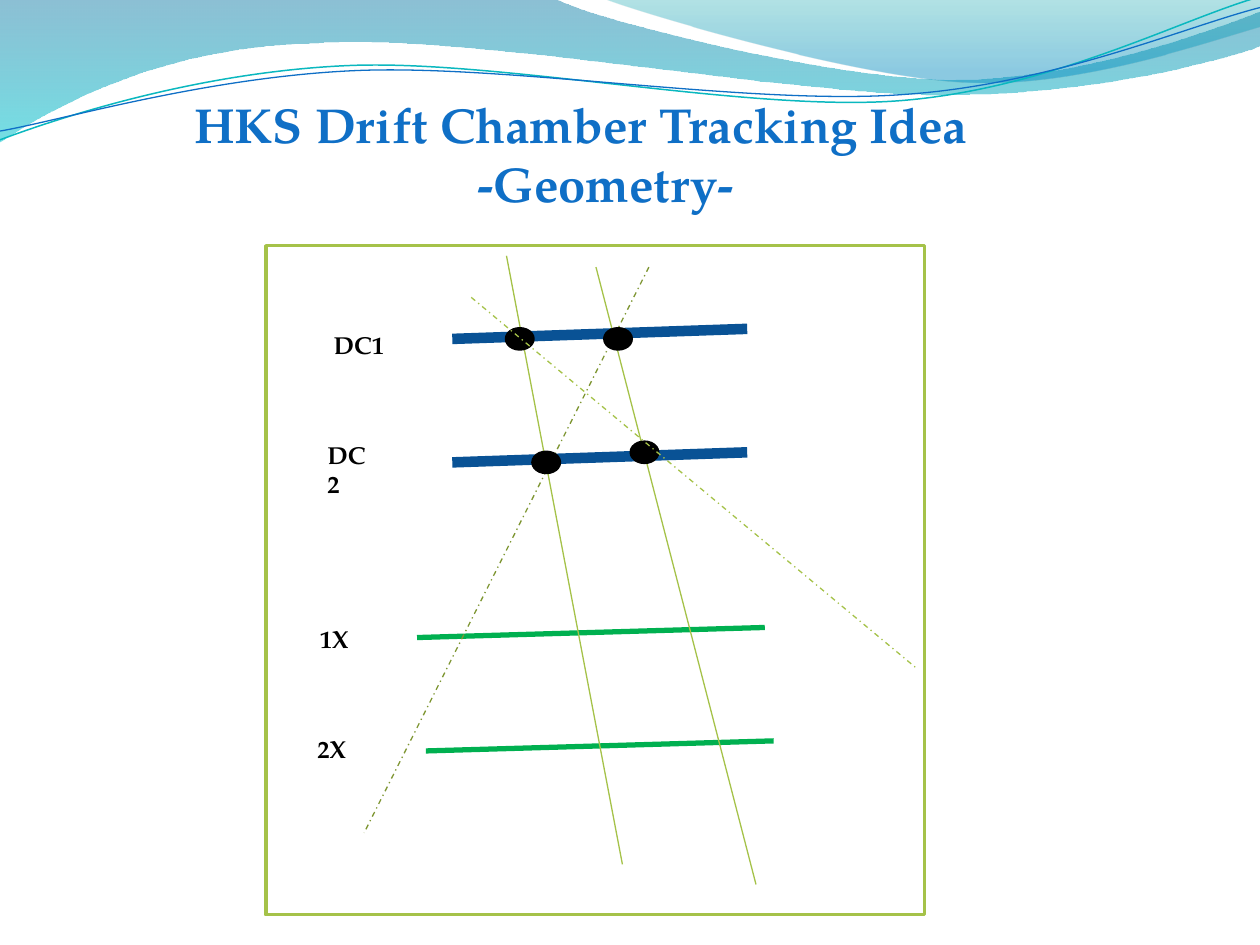
"""Build the HKS drift chamber geometry slide on a grid of 100 columns by 75 rows."""
import math

from lxml import etree
from pptx import Presentation
from pptx import util as u
from pptx.dml.color import RGBColor
from pptx.enum import dml, shapes, text
from pptx.oxml import ns

FONT = "TeX Gyre Pagella"
WHITE = RGBColor(0xFF, 0xFF, 0xFF)
BLACK = RGBColor(0x00, 0x00, 0x00)
BLUE = RGBColor(0x0F, 0x6F, 0xC6)
NAVY = RGBColor(0x09, 0x52, 0x95)
TEAL = RGBColor(0x0A, 0xB8, 0xBF)
LIME = RGBColor(0xA5, 0xC2, 0x49)
OLIVE = RGBColor(0x7E, 0x96, 0x32)
GREEN = RGBColor(0x00, 0xB0, 0x50)
DEEP_SEA = RGBColor(0x00, 0x74, 0xA1)
AQUA = RGBColor(0x00, 0xC6, 0xCF)
LAGOON = RGBColor(0x00, 0xA1, 0xA9)
SKY = RGBColor(0x00, 0x8B, 0xBF)

WIDTH, HEIGHT = u.Inches(10), u.Inches(7.5)
COLUMN, ROW = WIDTH / 100, HEIGHT / 75
CURVE_TILT = 2.7
PLANE_RISE = 0.8
HIT_SIZE = (2.1, 1.6)

BIG_WAVE = [[(0, 0)], [(44, -0.1)],
            [(47.6, 1.7), (66.4, 6.3), (75.8, 6.3)],
            [(85.3, 6.3), (95.8, 2.6), (100, 0.9)], [(100.1, 3.6)],
            [(98.3, 4.4), (87, 7.6), (74.6, 7.5)],
            [(62.2, 7.5), (38.2, 2.8), (25.7, 3.4)],
            [(12.9, 3.6), (4.6, 8.3), (-0.1, 11.3)], [(0, 0)]]
SMALL_WAVE = [[(47.9, -0.1)], [(50.9, 1.1), (68.2, 6.2), (76.9, 6.5)],
              [(85.6, 6.9), (96.1, 3.2), (100, 2.1)], [(100, 0)], [(47.9, -0.1)]]
TEAL_CURVE = [[(0, 11.1)], [(4.8, 9.3), (15.8, 5.7), (27.7, 5.2)],
              [(39.5, 4.7), (59.3, 8.9), (71.3, 8)],
              [(83.3, 7.1), (93.8, 1.5), (99.8, -0.2)]]
BLUE_CURVE = [[(0, 10.4)], [(4.7, 9.6), (16.4, 6.1), (28.3, 5.6)],
              [(40.3, 5.1), (59.7, 8.4), (71.7, 7.5)],
              [(83.6, 6.7), (94.1, 2.1), (100, 0.6)]]

PLANES = [(35.9, 59.3, 26.9, NAVY, 6), (35.9, 59.3, 36.7, NAVY, 6),
          (33.1, 60.7, 50.6, GREEN, 3), (33.8, 61.4, 59.6, GREEN, 3)]
TRACKS = [((40.2, 20.3), (49.4, 68.6)), ((47.3, 21.2), (60, 70.2))]
HITS = [(40.2, 26.1), (48, 26.1), (42.3, 35.9), (50.1, 35.1)]
LABELS = [("DC1", 25.5, 25.7, 8.7), ("DC2", 25, 34.4, 5.8),
          ("1X", 24.4, 49, 6.6), ("2X", 24.2, 57.8, 6.5)]


def place(column, row):
    """Turn a grid position or size into slide lengths."""
    return u.Emu(round(column * COLUMN)), u.Emu(round(row * ROW))


def turn(outline, center, degrees):
    """Turn an outline clockwise about a center."""
    cos, sin = math.cos(math.radians(degrees)), math.sin(math.radians(degrees))
    (x, y) = center
    return [[(x + (a - x) * cos - (b - y) * sin, y + (a - x) * sin + (b - y) * cos)
             for a, b in segment] for segment in outline]


def add_outline(page, outline, closed):
    """Add a freeform whose three-point segments are cubic curves."""
    start, *others = [place(*point) for segment in outline for point in segment]
    builder = page.shapes.build_freeform(*start, scale=1.0)
    builder.add_line_segments(others, close=closed)
    shape = builder.convert_to_shape()
    shape.shadow.inherit = False
    steps = iter(list(shape.element.spPr.iter(ns.qn("a:lnTo"))))
    for segment in outline[1:]:
        straight = [next(steps) for _ in segment]
        if len(segment) == 3:
            curve = straight[0].makeelement(ns.qn("a:cubicBezTo"))
            straight[0].addprevious(curve)
            for step in straight:
                curve.append(step[0])
                step.getparent().remove(step)
    return shape


def add_wave(page, outline, stops):
    """Add a wave with a translucent gradient running downwards."""
    wave = add_outline(page, outline, True)
    wave.line.fill.background()
    wave.fill.gradient()
    wave.fill.gradient_angle = 270
    for stop, (position, color, _) in zip(wave.fill.gradient_stops, stops):
        stop.position = position
        stop.color.rgb = color
    tints = wave.element.spPr.iter(ns.qn("a:srgbClr"))
    for tint, (_, _, opacity) in zip(list(tints), stops):
        etree.SubElement(tint, ns.qn("a:alpha"), val=str(opacity * 1000))


def add_curve(page, outline, center, color, weight):
    """Add an open, slightly tilted curved line."""
    curve = add_outline(page, turn(outline, center, CURVE_TILT), False)
    curve.rotation = -CURVE_TILT
    curve.fill.background()
    curve.line.color.rgb = color
    curve.line.width = u.Pt(weight)


def add_line(page, start, end, color, weight=0.75, dashed=False):
    """Add a straight line between two grid positions."""
    line = page.shapes.add_connector(
        shapes.MSO_CONNECTOR.STRAIGHT, *place(*start), *place(*end))
    line.line.color.rgb = color
    line.line.width = u.Pt(weight)
    if dashed:
        line.line.dash_style = dml.MSO_LINE.DASH_DOT
    etree.SubElement(line.element.spPr, ns.qn("a:effectLst"))


def add_figure(page, kind, corner, size, fill, edge):
    """Add a filled preset shape with a two-point edge."""
    figure = page.shapes.add_shape(kind, *place(*corner), *place(*size))
    figure.shadow.inherit = False
    figure.fill.solid()
    figure.fill.fore_color.rgb = fill
    figure.line.color.rgb = edge
    figure.line.width = u.Pt(2)


def add_span(para, words, size, color):
    """Add a bold run to a paragraph."""
    span = para.add_run()
    span.text = words
    span.font.name = FONT
    span.font.size = u.Pt(size)
    span.font.bold = True
    span.font.color.rgb = color


def add_label(page, words, column, row, columns):
    """Add a detector label."""
    box = page.shapes.add_textbox(*place(column, row), *place(columns, 3.4))
    box.text_frame.word_wrap = True
    box.text_frame.auto_size = text.MSO_AUTO_SIZE.SHAPE_TO_FIT_TEXT
    add_span(box.text_frame.paragraphs[0], words, 14, BLACK)


def set_title(page):
    """Move and fill the title placeholder."""
    title = page.shapes.title
    title.left, title.top = place(12.5, 7)
    title.width, title.height = place(71.1, 15.1)
    frame = title.text_frame
    frame.word_wrap = True
    frame.auto_size = text.MSO_AUTO_SIZE.NONE
    frame.vertical_anchor = text.MSO_ANCHOR.TOP
    lines = [("HKS Drift Chamber Tracking Idea", text.PP_ALIGN.LEFT, 1.9),
             ("-Geometry-", text.PP_ALIGN.CENTER, 0)]
    frame.add_paragraph()
    for para, (words, alignment, indent) in zip(frame.paragraphs, lines):
        para.alignment = alignment
        margins = para._p.get_or_add_pPr()
        margins.set("marL", str(int(place(indent, 0)[0])))
        margins.set("indent", "0")
        add_span(para, words, 28, BLUE)


def draw_geometry(page):
    """Draw the framed chambers, tracks, hits and labels."""
    add_figure(page, shapes.MSO_SHAPE.RECTANGLE, (21.1, 19.5), (52.3, 53.1), WHITE, LIME)
    for left, right, row, color, weight in PLANES:
        add_line(page, (left, row), (right, row - PLANE_RISE), color, weight)
    add_line(page, (51.5, 21.2), (28.9, 66.1), OLIVE, dashed=True)
    for start, end in TRACKS:
        add_line(page, start, end, LIME)
    for corner in HITS:
        add_figure(page, shapes.MSO_SHAPE.OVAL, corner, HIT_SIZE, BLACK, BLACK)
    add_line(page, (37.4, 23.6), (72.7, 53), LIME, dashed=True)
    for label in LABELS:
        add_label(page, *label)


def main():
    """Build and save the deck."""
    deck = Presentation()
    deck.slide_width, deck.slide_height = WIDTH, HEIGHT
    page = deck.slides.add_slide(deck.slide_layouts[5])
    add_wave(page, BIG_WAVE, [(0, DEEP_SEA, 45), (1, AQUA, 55)])
    add_wave(page, SMALL_WAVE, [(0, LAGOON, 30), (0.8, SKY, 45)])
    add_curve(page, TEAL_CURVE, (49.9, 5.75), TEAL, 0.85)
    add_curve(page, BLUE_CURVE, (49.95, 5.9), BLUE, 0.75)
    draw_geometry(page)
    set_title(page)
    deck.save("out.pptx")


if __name__ == "__main__":
    main()
